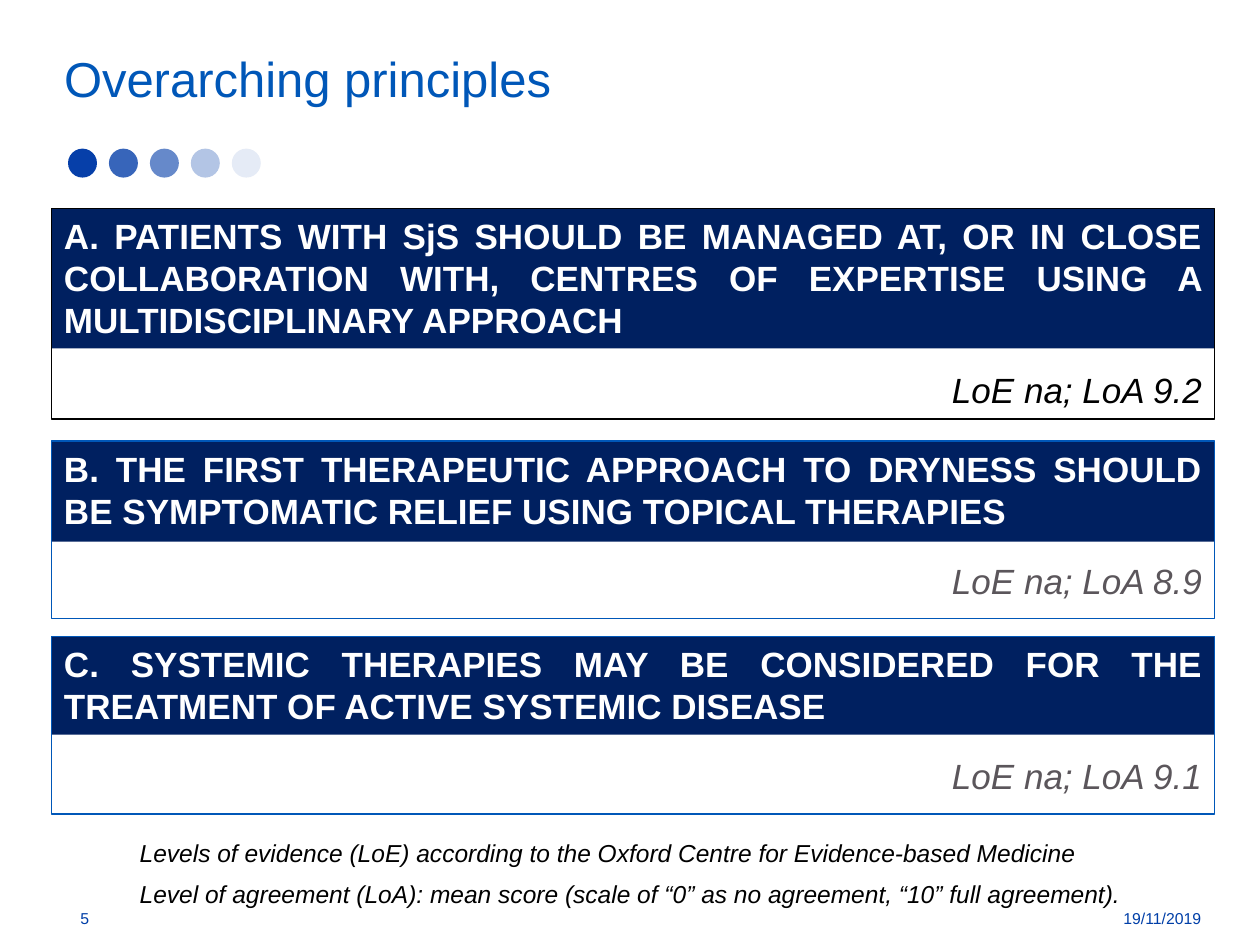
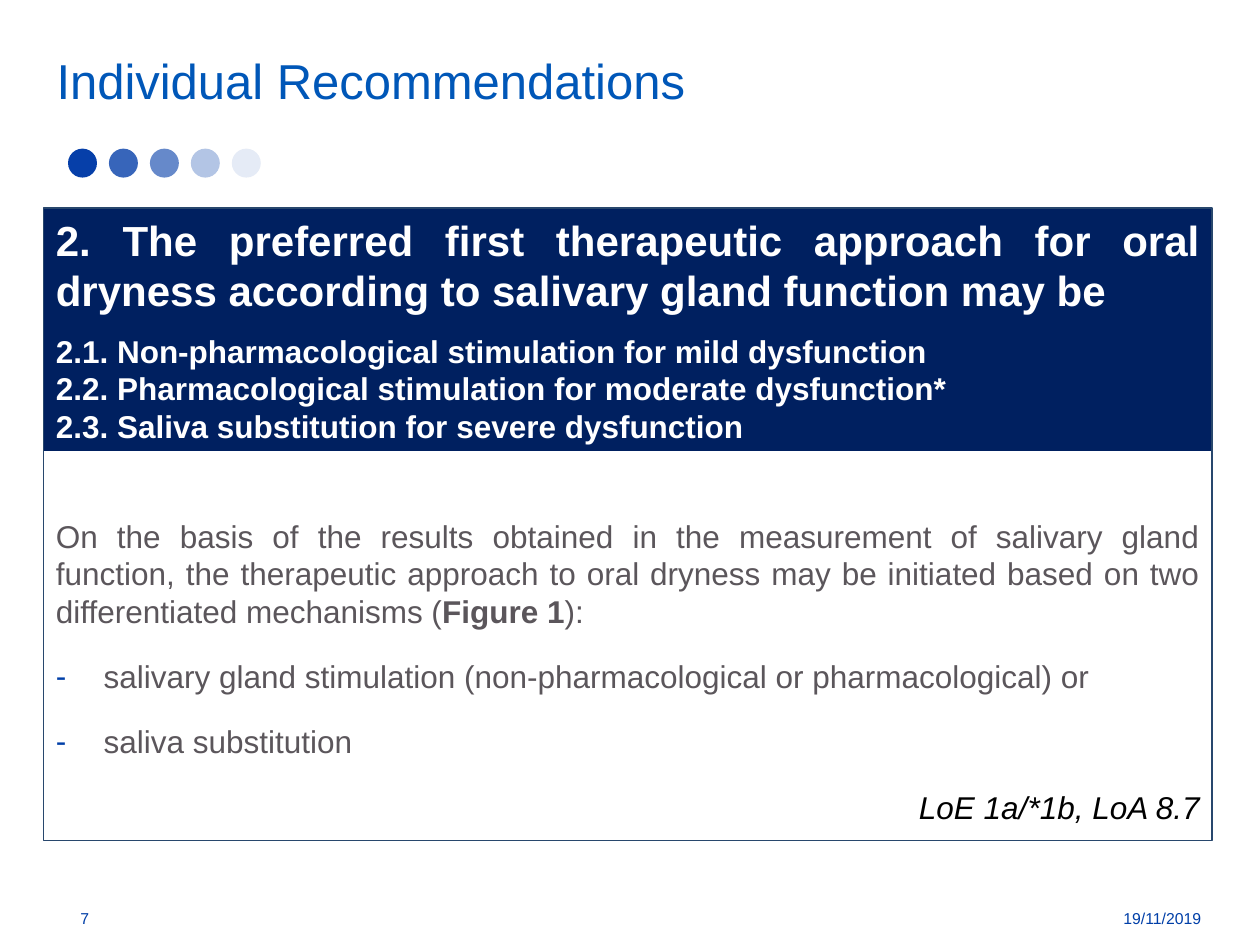
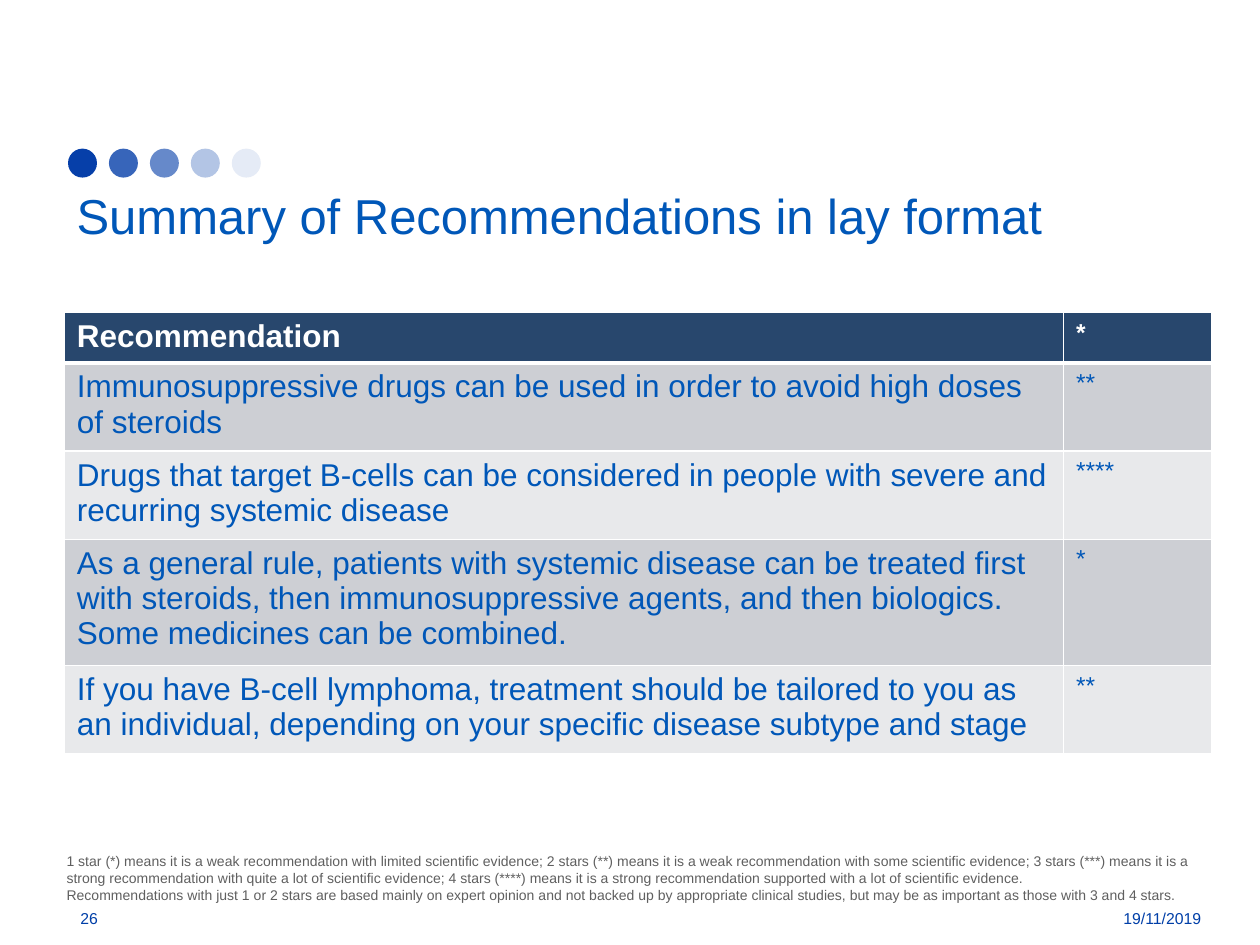
from lxml.etree import SubElement
from pptx import Presentation
from pptx.dml.color import RGBColor
from pptx.enum.shapes import MSO_SHAPE
from pptx.enum.text import MSO_ANCHOR, PP_ALIGN
from pptx.oxml.ns import qn
from pptx.util import Emu, Inches, Pt

FONT = "Arial"
COLORS = {
    "title": "0057B8", "footer": "003FA8", "dot": "063FA9", "band": "002060",
    "header": "28476D", "body": "5B565B", "note": "5F5F5F", "black": "000000",
    "white": "FFFFFF", "odd_row": "CDCFD4", "even_row": "E8E9EB",
}
SLIDE_WIDTH, SLIDE_HEIGHT = Inches(10), Inches(7.5)
COLUMN, ROW = SLIDE_WIDTH // 100, SLIDE_HEIGHT // 75
DATE = "19/11/2019"
DOT_OPACITIES = (100, 80, 61, 30, 10)

# heading, agreement, agreement colour, outline colour, top, band height, box height
PRINCIPLES = [
    ("A. PATIENTS WITH SjS SHOULD BE MANAGED AT, OR IN CLOSE COLLABORATION WITH, "
     "CENTRES OF EXPERTISE USING A MULTIDISCIPLINARY APPROACH",
     "LoE na; LoA 9.2", "black", "black", 16.55, 11.1, 16.7),
    ("B. THE FIRST THERAPEUTIC APPROACH TO DRYNESS SHOULD BE SYMPTOMATIC RELIEF "
     "USING TOPICAL THERAPIES",
     "LoE na; LoA 8.9", "body", "title", 35, 8, 14.1),
    ("C. SYSTEMIC THERAPIES MAY BE CONSIDERED FOR THE TREATMENT OF ACTIVE "
     "SYSTEMIC DISEASE",
     "LoE na; LoA 9.1", "body", "title", 50.5, 7.8, 14.1),
]
EVIDENCE_NOTES = [
    "Levels of evidence (LoE) according to the Oxford Centre for Evidence-based Medicine",
    "Level of agreement (LoA): mean score (scale of “0” as no agreement, “10” full agreement).",
]
ORAL_DRYNESS_STEPS = [
    "2.1. Non-pharmacological stimulation for mild dysfunction",
    "2.2. Pharmacological stimulation for moderate dysfunction*",
    "2.3. Saliva substitution for severe dysfunction",
]
MECHANISMS = [
    "salivary gland stimulation (non-pharmacological or pharmacological) or",
    "saliva substitution",
]
LAY_SUMMARY = [
    ("Recommendation", "*"),
    ("Immunosuppressive drugs can be used in order to avoid high doses of steroids", "**"),
    ("Drugs that target B-cells can be considered in people with severe and recurring "
     "systemic disease", "****"),
    ("As a general rule, patients with systemic disease can be treated first with steroids, "
     "then immunosuppressive agents, and then biologics. Some medicines can be combined.", "*"),
    ("If you have B-cell lymphoma, treatment should be tailored to you as an individual, "
     "depending on your specific disease subtype and stage", "**"),
]
STAR_NOTES = [
    "1 star (*) means it is a weak recommendation with limited scientific evidence; "
    "2 stars (**) means it is a weak recommendation with some scientific evidence; "
    "3 stars (***) means it is a strong recommendation with quite a lot of scientific evidence; "
    "4 stars (****) means it is a strong recommendation supported with a lot of scientific "
    "evidence.",
    "Recommendations with just 1 or 2 stars are based mainly on expert opinion and not backed up "
    "by appropriate clinical studies, but may be as important as those with 3 and 4 stars.",
]


def rgb(color):
    return RGBColor.from_string(COLORS[color])


def place(left, top, width, height):
    """Turn grid columns and rows into slide lengths."""
    return (Emu(round(left * COLUMN)), Emu(round(top * ROW)),
            Emu(round(width * COLUMN)), Emu(round(height * ROW)))


def add_bullet(paragraph, mark):
    properties = paragraph._p.get_or_add_pPr()
    properties.set("marL", str(Inches(0.38)))
    properties.set("indent", str(-Inches(0.38)))
    color = SubElement(properties, qn("a:buClr"))
    SubElement(color, qn("a:srgbClr"), val=COLORS["footer"])
    SubElement(properties, qn("a:buFont"), typeface=FONT)
    SubElement(properties, qn("a:buChar"), char=mark)


def write(frame, runs, size, color, align=PP_ALIGN.LEFT, before=0, spacing=1.0, bullet=None):
    """Add a paragraph of (text, style) runs; style holds b for bold, i for italic."""
    paragraph = frame.paragraphs[0]
    if paragraph.runs:
        paragraph = frame.add_paragraph()
    if bullet:
        add_bullet(paragraph, bullet)
    paragraph.alignment = align
    paragraph.line_spacing = spacing
    paragraph.space_before = Pt(before)
    for text, style in runs:
        run = paragraph.add_run()
        run.text = text
        run.font.name, run.font.size = FONT, Pt(size)
        run.font.bold, run.font.italic = "b" in style, "i" in style
        run.font.color.rgb = rgb(color)


def add_text_area(slide, area, anchor=MSO_ANCHOR.TOP):
    frame = slide.shapes.add_textbox(*place(*area)).text_frame
    frame.word_wrap = True
    frame.vertical_anchor = anchor
    return frame


def add_flat_shape(shapes, kind, area, fill=None, outline=None):
    shape = shapes.add_shape(kind, *place(*area))
    shape.shadow.inherit = False
    if fill:
        shape.fill.solid()
        shape.fill.fore_color.rgb = rgb(fill)
    else:
        shape.fill.background()
    if outline:
        shape.line.color.rgb = rgb(outline)
        shape.line.width = Pt(0.75)
    else:
        shape.line.fill.background()
    return shape


def add_dots(slide):
    dots = slide.shapes.add_group_shape().shapes
    for index, opacity in enumerate(DOT_OPACITIES):
        dot = add_flat_shape(dots, MSO_SHAPE.OVAL, (5.4 + 3.25 * index, 11.8, 2.3, 2.3), "dot")
        if opacity < 100:
            color = dot._element.spPr.find(qn("a:solidFill"))[0]
            SubElement(color, qn("a:alpha"), val=str(opacity * 1000))


def add_page(deck, title, title_left, title_top, number):
    """Add a blank slide with the shared dots, title and footer."""
    slide = deck.slides.add_slide(deck.slide_layouts[6])
    add_dots(slide)
    heading = add_text_area(slide, (title_left, title_top, 91.1, 6.3), MSO_ANCHOR.MIDDLE)
    write(heading, [(title, "")], 28, "title", spacing=0.9)
    for text, left, width, align in ((str(number), 5.4, 9.6, PP_ALIGN.LEFT),
                                     (DATE, 82.9, 13.4, PP_ALIGN.RIGHT)):
        footer = add_text_area(slide, (left, 70.9, width, 4), MSO_ANCHOR.MIDDLE)
        write(footer, [(text, "")], 9, "footer", align)
    return slide


def add_banded_box(slide, left, top, width, band_height, box_height, outline):
    """Draw an outlined box over a dark band; return the box's text frame."""
    add_flat_shape(slide.shapes, MSO_SHAPE.RECTANGLE, (left, top, width, band_height), "band")
    box = add_flat_shape(slide.shapes, MSO_SHAPE.RECTANGLE,
                         (left, top, width, box_height), outline=outline)
    frame = box.text_frame
    frame.word_wrap = True
    frame.vertical_anchor = MSO_ANCHOR.TOP
    return frame


def border_cell(cell, top, bottom):
    properties = cell._tc.get_or_add_tcPr()
    widths = {"a:lnL": 1, "a:lnR": 1, "a:lnT": top, "a:lnB": bottom}
    for position, (tag, width) in enumerate(widths.items()):
        line = SubElement(properties, qn(tag), w=str(Pt(width)))
        fill = SubElement(line, qn("a:solidFill"))
        SubElement(fill, qn("a:srgbClr"), val=COLORS["white"])
        properties.insert(position, line)


def add_lay_table(slide):
    row_height = 4
    area = place(5.1, 24.8, 91.1, row_height * len(LAY_SUMMARY))
    table = slide.shapes.add_table(len(LAY_SUMMARY), 2, *area).table
    for column, width in zip(table.columns, (79.3, 11.8)):
        column.width = Emu(round(width * COLUMN))
    for index, (advice, stars) in enumerate(LAY_SUMMARY):
        is_header = index == 0
        fill = "header" if is_header else "odd_row" if index % 2 else "even_row"
        color = "white" if is_header else "title"
        style = "b" if is_header else ""
        for column, (text, size) in enumerate(((advice, 18), (stars, 14))):
            cell = table.cell(index, column)
            cell.fill.solid()
            cell.fill.fore_color.rgb = rgb(fill)
            border_cell(cell, 3 if index == 1 else 1, 3 if is_header else 1)
            write(cell.text_frame, [(text, style)], size, color)


def build_principles(deck):
    slide = add_page(deck, "Overarching principles", 4.1, 3.3, 5)
    for heading, agreement, color, outline, top, band_height, box_height in PRINCIPLES:
        frame = add_banded_box(slide, 4.1, top, 92.3, band_height, box_height, outline)
        write(frame, [(heading, "b")], 20, "white", PP_ALIGN.JUSTIFY)
        write(frame, [(agreement, "i")], 20, color, PP_ALIGN.RIGHT, before=16)
    notes = add_text_area(slide, (10.1, 66, 87.9, 6.9))
    for index, note in enumerate(EVIDENCE_NOTES):
        write(notes, [(note, "i")], 14, "black", before=7 if index else 0)


def build_oral_dryness(deck):
    slide = add_page(deck, "Individual Recommendations", 3.5, 3.5, 7)
    frame = add_banded_box(slide, 3.45, 16.5, 92.75, 19.3, 50.2, "header")
    justify, gap = PP_ALIGN.JUSTIFY, 15.6
    write(frame, [("2. The preferred first therapeutic approach for oral dryness according to "
                   "salivary gland function may be", "b")], 24, "white", justify)
    for index, step in enumerate(ORAL_DRYNESS_STEPS):
        write(frame, [(step, "b")], 18, "white", justify, before=0 if index else 9.5)
    write(frame, [("On the basis of the results obtained in the measurement of salivary gland "
                   "function, the therapeutic approach to oral dryness may be initiated based on "
                   "two differentiated mechanisms (", ""), ("Figure 1", "b"), ("):", "")],
          18, "body", justify, before=41)
    for mechanism in MECHANISMS:
        write(frame, [(mechanism, "")], 18, "body", justify, before=gap, bullet="-")
    write(frame, [("LoE 1a/*1b, LoA 8.7", "i")], 18, "black", PP_ALIGN.RIGHT, before=gap)


def build_lay_summary(deck):
    slide = add_page(deck, "Summary of Recommendations in lay format", 5.1, 14.2, 26)
    add_lay_table(slide)
    notes = add_text_area(slide, (4.3, 67.2, 91.4, 5))
    for note in STAR_NOTES:
        write(notes, [(note, "")], 8, "note")


def main():
    deck = Presentation()
    deck.slide_width, deck.slide_height = SLIDE_WIDTH, SLIDE_HEIGHT
    build_principles(deck)
    build_oral_dryness(deck)
    build_lay_summary(deck)
    deck.save("out.pptx")


if __name__ == "__main__":
    main()
